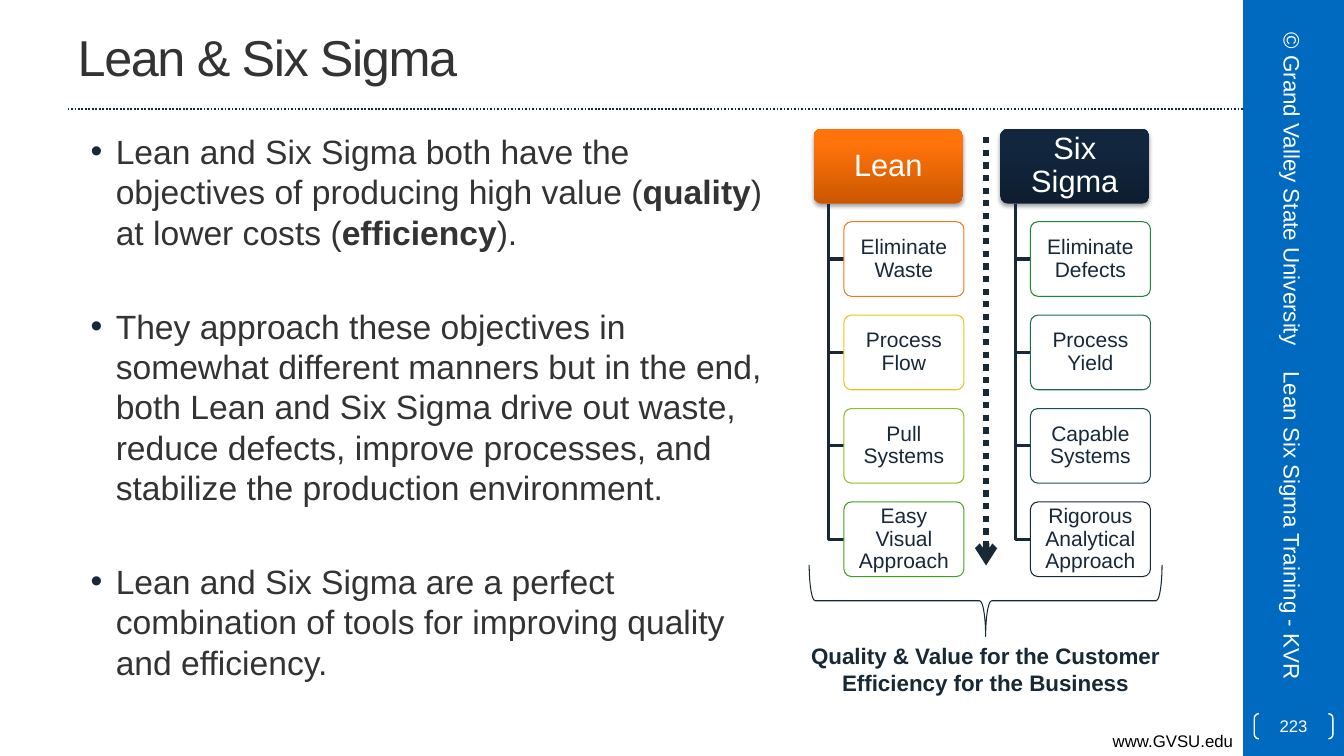
from lxml import etree
from pptx import Presentation
from pptx.dml.color import RGBColor
from pptx.enum.dml import MSO_LINE
from pptx.enum.shapes import MSO_CONNECTOR, MSO_SHAPE
from pptx.enum.text import MSO_ANCHOR, MSO_AUTO_SIZE, PP_ALIGN
from pptx.oxml import parse_xml
from pptx.oxml.ns import nsdecls, qn
from pptx.util import Inches, Pt

FONT = "Arial"
COLORS = {
    "sidebar": "0069C0", "rule": "17273B", "text": "333333", "navy": "18283B",
    "slate": "182835", "white": "FFFFFF", "black": "000000",
}
COLUMNS = [
    ("Lean", 8.07, ("CC5700", "FF730A", "FF730B"), [
        ("Eliminate Waste", "F4791D"), ("Process Flow", "E2C814"),
        ("Pull Systems", "8CC119"), ("Easy Visual Approach", "3DA31D")]),
    ("Six Sigma", 9.92, ("0E1E30", "12263E", "11263F"), [
        ("Eliminate Defects", "1E8634"), ("Process Yield", "1E6B50"),
        ("Capable Systems", "1C4D52"), ("Rigorous Analytical Approach", "18283B")]),
]
HEAD_TOP, HEAD_W, BOX_H = 1.28, 1.48, 0.74
ITEM_TOP, ITEM_W, ITEM_STEP = 2.2, 1.19, 2.78 / 3
BULLETS = [
    [("Lean and Six Sigma both have the objectives of producing high value (", False),
     ("quality", True), (") at lower costs (", False), ("efficiency", True), (").", False)],
    [("They approach these objectives in somewhat different manners but in the end, "
      "both Lean and Six Sigma drive out waste, reduce defects, improve processes, "
      "and stabilize the production environment.", False)],
    [("Lean and Six Sigma are a perfect combination of tools for improving quality "
      "and efficiency.", False)],
]


def rgb(value):
    return RGBColor.from_string(COLORS.get(value, value))


def set_font(font, size, color, bold=False):
    for name, value in {"name": FONT, "size": Pt(size), "bold": bold}.items():
        setattr(font, name, value)
    font.color.rgb = rgb(color)


def set_frame(tf, anchor, insets=None):
    formats = {"word_wrap": True, "auto_size": MSO_AUTO_SIZE.NONE, "vertical_anchor": anchor}
    if insets:
        x, y = map(Inches, insets)
        formats |= {"margin_left": x, "margin_right": x, "margin_top": y, "margin_bottom": y}
    for name, value in formats.items():
        setattr(tf, name, value)


def write(sp, text, size, color, align=PP_ALIGN.CENTER, bold=False,
          anchor=MSO_ANCHOR.MIDDLE, insets=None, spacing=None):
    set_frame(sp.text_frame, anchor, insets)
    p = sp.text_frame.paragraphs[0]
    p.text, p.alignment, p.line_spacing = text, align, spacing
    for r in p.runs:
        set_font(r.font, size, color, bold)


def set_line(line, color, width, dash=None):
    line.color.rgb = rgb(color)
    line.width = Pt(width)
    if dash:
        line.dash_style = dash


def add_box(s, kind, at, fill=None, line=None, width=0.75):
    sp = s.shapes.add_shape(kind, *map(Inches, at))
    sp.shadow.inherit = False
    if fill:
        sp.fill.solid()
        sp.fill.fore_color.rgb = rgb(fill)
    else:
        sp.fill.background()
    if line:
        set_line(sp.line, line, width)
    else:
        sp.line.fill.background()
    return sp


def add_text(s, at, text, size, color, rotation=0, **formats):
    sp = s.shapes.add_textbox(*map(Inches, at))
    sp.rotation = rotation
    write(sp, text, size, color, **formats)


def add_dotted_line(s, start, end, color, width, arrow=False):
    sp = s.shapes.add_connector(MSO_CONNECTOR.STRAIGHT, *map(Inches, start + end))
    set_line(sp.line, color, width, MSO_LINE.ROUND_DOT)
    if arrow:
        etree.SubElement(sp.line._get_or_add_ln(), qn("a:tailEnd"), type="arrow")
    etree.SubElement(sp._element.spPr, qn("a:effectLst"))


def add_heading(s, text, x, stops):
    """Add a column heading with a vertical gradient and a soft shadow."""
    sp = add_box(s, MSO_SHAPE.ROUNDED_RECTANGLE, (x, HEAD_TOP, HEAD_W, BOX_H), stops[0])
    sp.adjustments[0] = 0.1
    spPr = sp._element.spPr
    gs = "".join(f'<a:gs pos="{pos}"><a:srgbClr val="{c}"/></a:gs>'
                 for pos, c in zip((0, 80000, 100000), stops))
    grad = parse_xml(f'<a:gradFill {nsdecls("a")} rotWithShape="1"><a:gsLst>{gs}</a:gsLst>'
                     '<a:lin ang="16200000" scaled="0"/></a:gradFill>')
    spPr.replace(spPr.find(qn("a:solidFill")), grad)
    spPr.find(qn("a:effectLst")).append(parse_xml(
        f'<a:outerShdw {nsdecls("a")} blurRad="{Pt(3.1)}" dist="{Pt(1.8)}" dir="5400000" '
        'rotWithShape="0"><a:srgbClr val="000000"><a:alpha val="35000"/></a:srgbClr>'
        '</a:outerShdw>'))
    write(sp, text, 22, "white", insets=(0.05, 0.03), spacing=0.9)


def add_branch(s, x, y):
    """Draw an elbow from the heading down to an item's left edge."""
    top = HEAD_TOP + BOX_H
    fb = s.shapes.build_freeform(Inches(x), Inches(top))
    fb.add_line_segments([(Inches(x), Inches(y)), (Inches(x + 0.15), Inches(y))], close=False)
    sp = fb.convert_to_shape()
    sp.shadow.inherit = False
    sp.fill.background()
    set_line(sp.line, "navy", 2.25)


def add_column(s, heading, x, stops, items):
    add_heading(s, heading, x, stops)
    for i, (text, color) in enumerate(items):
        y = ITEM_TOP + i * ITEM_STEP
        add_branch(s, x + 0.15, y + BOX_H / 2)
        sp = add_box(s, MSO_SHAPE.ROUNDED_RECTANGLE, (x + 0.3, y, ITEM_W, BOX_H), "white", color)
        sp.adjustments[0] = 0.1
        write(sp, text, 15, "navy", insets=(0.06, 0.02), spacing=0.9)


def add_bullets(s):
    sp = s.shapes.add_textbox(*map(Inches, (0.67, 1.25, 7.12, 6)))
    tf = sp.text_frame
    set_frame(tf, MSO_ANCHOR.TOP)
    for i, runs in enumerate(BULLETS):
        p = tf.add_paragraph() if i else tf.paragraphs[0]
        pPr = p._p.get_or_add_pPr()
        pPr.set("marL", str(Inches(0.38)))
        pPr.set("indent", str(Inches(-0.25)))
        color = etree.SubElement(pPr, qn("a:buClr"))
        etree.SubElement(color, qn("a:srgbClr"), val=COLORS["navy"])
        etree.SubElement(pPr, qn("a:buFont"), typeface=FONT)
        etree.SubElement(pPr, qn("a:buChar"), char="•")
        p.space_before = Pt(38.4 if i else 0)
        for text, bold in runs:
            r = p.add_run()
            r.text = text
            set_font(r.font, 24, "text", bold)


def add_title(s, text):
    sp = s.shapes.title
    sp.left, sp.top, sp.width, sp.height = map(Inches, (0.67, 0.03, 11.11, 1.05))
    write(sp, text, 36, "text", align=PP_ALIGN.LEFT)
    sp.text_frame.paragraphs[0].runs[0].font._element.set("spc", "-100")


def main():
    prs = Presentation()
    prs.slide_width, prs.slide_height = Inches(13.33), Inches(7.5)
    s = prs.slides.add_slide(prs.slide_layouts[5])

    add_box(s, MSO_SHAPE.RECTANGLE, (12.33, 0, 1, 7.5), "sidebar")
    add_dotted_line(s, (0.67, 1.08), (12.33, 1.08), "rule", 1.25)
    add_text(s, (0, 7.2, 12.33, 0.3), "www.GVSU.edu", 12, "black",
             align=PP_ALIGN.RIGHT, anchor=MSO_ANCHOR.TOP)
    add_title(s, "Lean & Six Sigma")
    add_bullets(s)

    for column in COLUMNS:
        add_column(s, *column)
    add_dotted_line(s, (9.78, 1.36), (9.78, 5.61), "slate", 4.5, arrow=True)
    brace = add_box(s, MSO_SHAPE.RIGHT_BRACE, (9.42, 4.21, 0.71, 3.5), line="slate")
    brace.rotation = 90
    add_text(s, (7.86, 6.32, 3.83, 0.64),
             "Quality & Value for the Customer\nEfficiency for the Business",
             16, "slate", bold=True, anchor=MSO_ANCHOR.TOP)

    add_text(s, (11.11, 5.03, 3.42, 0.53), "Lean Six Sigma Training - KVR", 16, "white",
             rotation=90, align=PP_ALIGN.LEFT)
    add_text(s, (11.11, 1.61, 3.42, 0.53), "© Grand Valley State University", 16, "white",
             rotation=90)
    number = add_box(s, MSO_SHAPE.DOUBLE_BRACKET, (12.44, 7.08, 0.78, 0.25),
                     line="white", width=1)
    number.adjustments[0] = 0.18
    write(number, "223", 12, "white", insets=(0, 0))
    prs.save("out.pptx")


if __name__ == "__main__":
    main()
